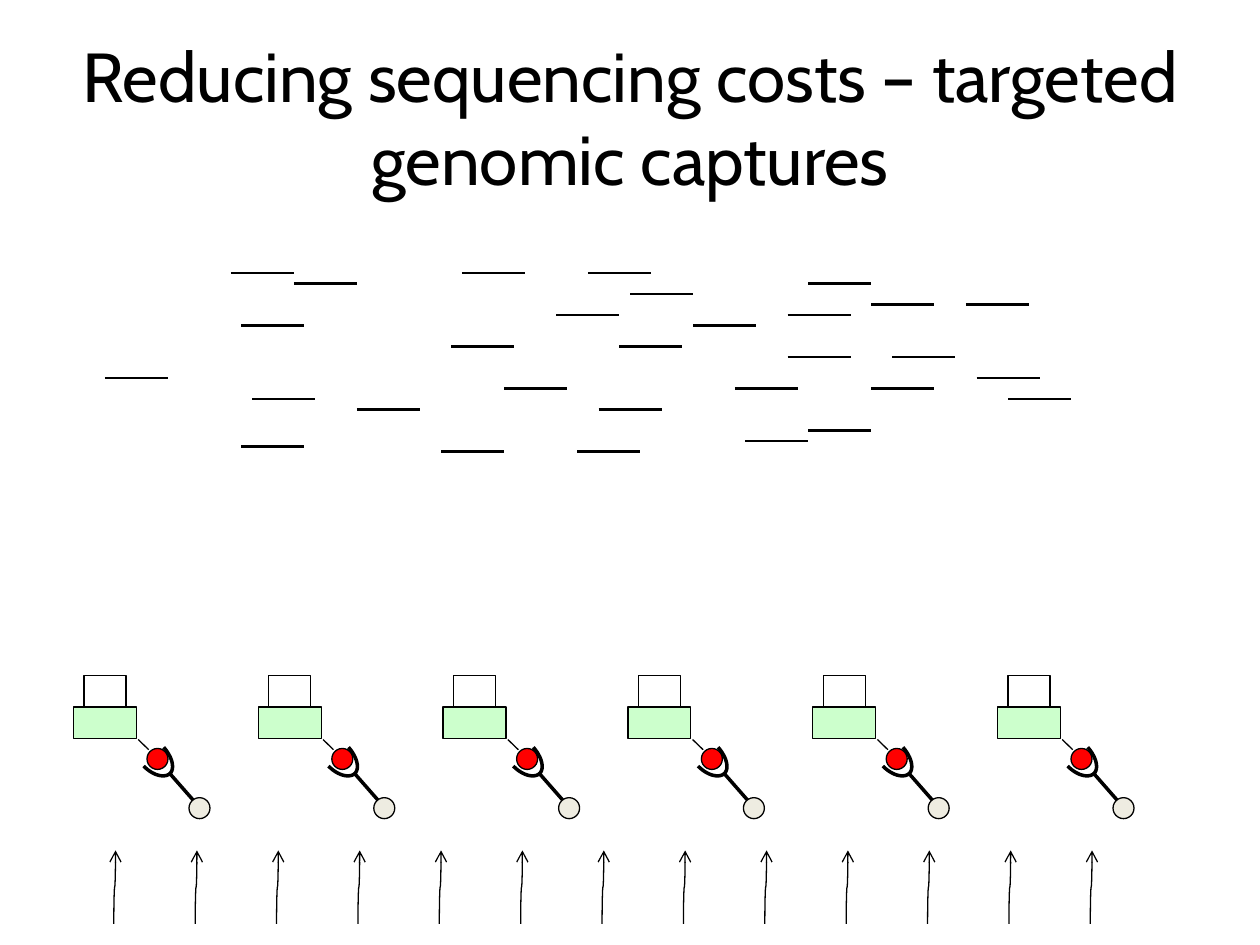
"""Build a slide about targeted genomic captures, with fragments, probes and arrows."""
from dataclasses import dataclass

from lxml import etree
from pptx import Presentation
from pptx import util as u
from pptx.dml import color
from pptx.enum import shapes, text
from pptx.oxml import ns
from pptx.shapes import base, connector as links, shapetree as tree
from pptx.slide import Slide

Pt = u.Pt
Point = tuple[float, float]
Shapes = tree.SlideShapes | tree.GroupShapes

BLACK = "000000"
FRAGMENT_LENGTH = 36
FRAGMENTS: list[Point] = [
    (138, 255), (450, 180), (336, 156), (426, 252), (288, 222), (420, 222),
    (258, 198), (264, 156), (354, 198), (342, 234), (396, 186), (132, 156),
    (60, 216), (138, 186), (204, 234), (168, 162), (252, 258), (144, 228),
    (330, 258), (462, 246), (360, 168), (318, 180), (462, 162), (510, 204),
    (450, 204), (498, 222), (552, 174), (498, 174), (576, 228), (558, 216),
]
PROBE_COUNT, PROBE_LEFT, PROBE_TOP, PROBE_PITCH = 6, 42, 386, 105.6
ARROW_COUNT, ARROW_X, ARROW_Y, ARROW_PITCH = 13, 65.5, 507, 46.5
ARROW_LENGTH, ARROW_SHIFT = 42, 1
CURVE_STEPS = 12


@dataclass(frozen=True)
class Part:
    kind: shapes.MSO_SHAPE
    left: float
    top: float
    width: float
    height: float
    fill: str


@dataclass(frozen=True)
class Stroke:
    start: Point
    end: Point
    weight: float


RECTANGLE, OVAL = shapes.MSO_SHAPE.RECTANGLE, shapes.MSO_SHAPE.OVAL
TARGET = Part(RECTANGLE, 0, 18, 36, 18, "CCFFCC")
TETHER = Stroke((37, 36.6), (43, 42.4), 0.75)
LABEL = Part(OVAL, 42, 41.7, 12, 12, "FF0000")
ADAPTER = Part(RECTANGLE, 6, 0, 24, 18, "FFFFFF")
STEM = Stroke((69.6, 72.6), (54.5, 55.4), 2)
BEAD = Part(OVAL, 66, 69.8, 12, 12, "EEECE1")
CUP: list[list[Point]] = [
    [(51.6, 41), (56.6, 46.7), (58.1, 53.2), (55.2, 56.1)],
    [(55.2, 56.1), (51.6, 59), (45.1, 56.8), (40.1, 51.8)],
]


def rgb(value: str) -> color.RGBColor:
    """Turn a hex string into a colour."""
    return color.RGBColor.from_string(value)


def set_line(shape: base.BaseShape, weight: float) -> None:
    """Give a shape or connector a black line."""
    shape.line.color.rgb = rgb(BLACK)
    shape.line.width = Pt(weight)


def add_stroke(target: Shapes, stroke: Stroke, x: float = 0, y: float = 0,
               kind: shapes.MSO_CONNECTOR = shapes.MSO_CONNECTOR.STRAIGHT) -> links.Connector:
    """Draw a connector offset by x and y."""
    (x1, y1), (x2, y2) = stroke.start, stroke.end
    connector = target.add_connector(kind, Pt(x + x1), Pt(y + y1), Pt(x + x2), Pt(y + y2))
    set_line(connector, stroke.weight)
    etree.SubElement(connector.element.spPr, ns.qn("a:effectLst"))
    return connector


def add_part(target: Shapes, part: Part, x: float, y: float) -> None:
    """Draw a filled preset shape offset by x and y."""
    shape = target.add_shape(part.kind, Pt(x + part.left), Pt(y + part.top),
                             Pt(part.width), Pt(part.height))
    shape.shadow.inherit = False
    shape.fill.solid()
    shape.fill.fore_color.rgb = rgb(part.fill)
    set_line(shape, 0.75)


def bezier_point(controls: list[Point], t: float) -> Point:
    """Return the point at t on a cubic curve."""
    weights = ((1 - t) ** 3, 3 * t * (1 - t) ** 2, 3 * t ** 2 * (1 - t), t ** 3)
    return (sum(w * px for w, (px, _) in zip(weights, controls)),
            sum(w * py for w, (_, py) in zip(weights, controls)))


def add_cup(target: Shapes, x: float, y: float) -> None:
    """Draw the open cup that holds the label."""
    start_x, start_y = CUP[0][0]
    points = [bezier_point(controls, step / CURVE_STEPS)
              for controls in CUP for step in range(1, CURVE_STEPS + 1)]
    builder = target.build_freeform(Pt(x + start_x), Pt(y + start_y))
    builder.add_line_segments([(Pt(x + px), Pt(y + py)) for px, py in points], close=False)
    cup = builder.convert_to_shape()
    cup.shadow.inherit = False
    cup.fill.background()
    set_line(cup, 2)


def add_probe(slide: Slide, x: float, y: float) -> None:
    """Draw one captured target with its bead as a group."""
    group = slide.shapes.add_group_shape().shapes
    add_part(group, TARGET, x, y)
    add_stroke(group, TETHER, x, y)
    add_part(group, LABEL, x, y)
    add_part(group, ADAPTER, x, y)
    add_stroke(group, STEM, x, y)
    add_cup(group, x, y)
    add_part(group, BEAD, x, y)


def add_arrow(slide: Slide, x: float, y: float) -> None:
    """Draw a curved upward arrow centred on x and y."""
    half, shift = ARROW_LENGTH / 2, ARROW_SHIFT / 2
    stroke = Stroke((half, shift), (-half, -shift), 0.75)
    arrow = add_stroke(slide.shapes, stroke, x, y, shapes.MSO_CONNECTOR.CURVE)
    arrow.element.spPr.find(ns.qn("a:xfrm")).set("rot", "5400000")
    etree.SubElement(arrow.line._get_or_add_ln(), ns.qn("a:tailEnd"), type="arrow")


def add_title(slide: Slide, words: str) -> None:
    """Place and format the title placeholder."""
    title = slide.shapes.title
    title.left, title.top, title.width, title.height = Pt(36), Pt(21.6), Pt(648), Pt(90)
    frame = title.text_frame
    frame.text = words
    frame.word_wrap = True
    frame.auto_size = text.MSO_AUTO_SIZE.NONE
    frame.vertical_anchor = text.MSO_ANCHOR.MIDDLE
    paragraph = frame.paragraphs[0]
    paragraph.alignment = text.PP_ALIGN.CENTER
    paragraph.font.name = "Cabin"
    paragraph.font.size = Pt(39.6)
    paragraph.font.color.rgb = rgb(BLACK)


def main() -> None:
    """Build and save the presentation."""
    presentation = Presentation()
    presentation.slide_width, presentation.slide_height = Pt(720), Pt(540)
    slide = presentation.slides.add_slide(presentation.slide_layouts.get_by_name("Title Only"))
    add_title(slide, "Reducing sequencing costs – targeted genomic captures")
    fragment = Stroke((0, 0), (FRAGMENT_LENGTH, 0), 1.5)
    for x, y in FRAGMENTS:
        add_stroke(slide.shapes, fragment, x, y)
    for index in range(PROBE_COUNT):
        add_probe(slide, PROBE_LEFT + index * PROBE_PITCH, PROBE_TOP)
    for index in range(ARROW_COUNT):
        add_arrow(slide, ARROW_X + index * ARROW_PITCH, ARROW_Y)
    presentation.save("out.pptx")


if __name__ == "__main__":
    main()
